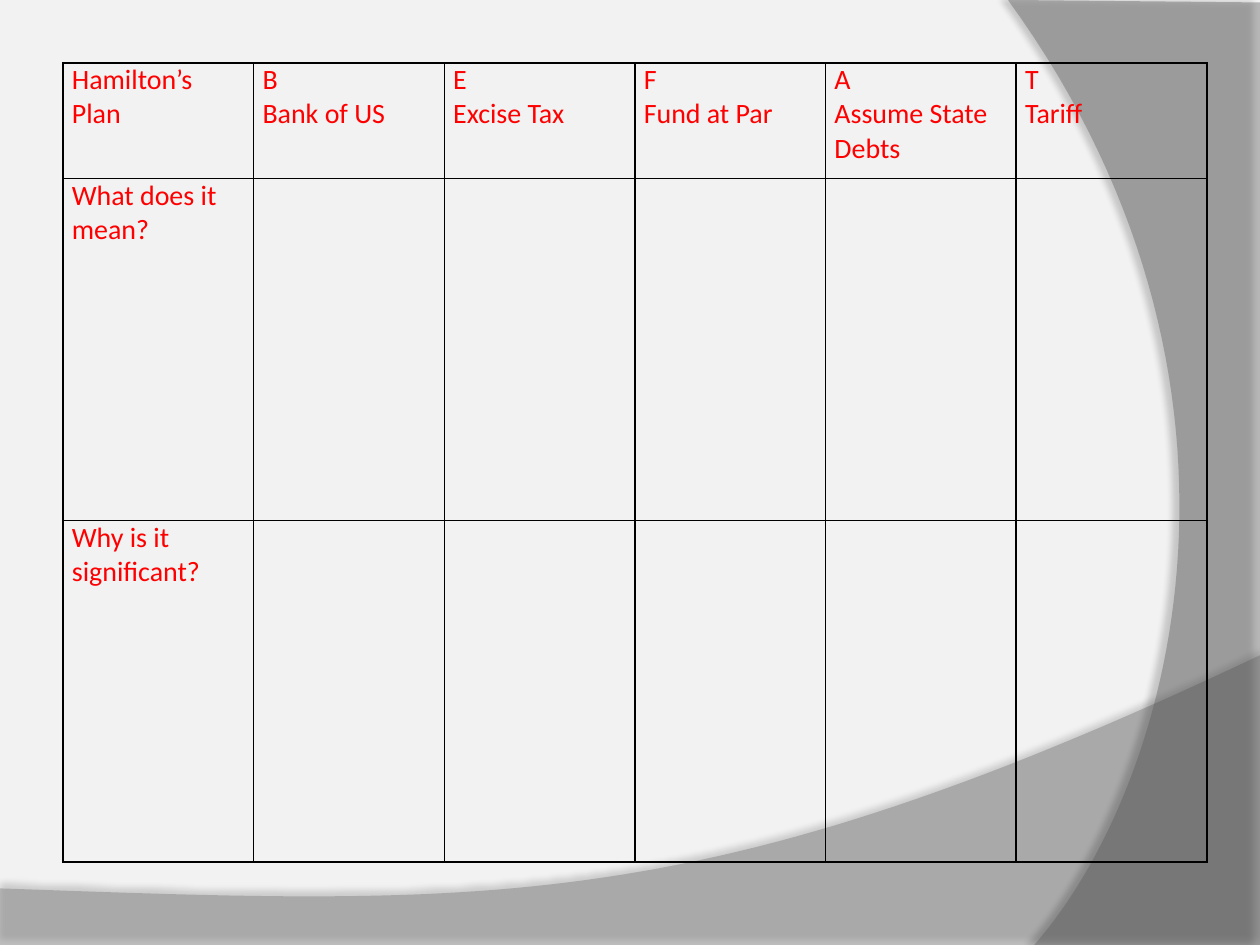
from lxml import etree
from pptx import Presentation
from pptx.dml.color import RGBColor
from pptx.enum.text import MSO_ANCHOR
from pptx.oxml.ns import qn
from pptx.util import Cm, Pt

TOP = MSO_ANCHOR.TOP
BACKGROUND = RGBColor(0xF2, 0xF2, 0xF2)
WAVE_GRAY = RGBColor(0x7F, 0x7F, 0x7F)
ARC_GRAY = RGBColor(0x5E, 0x5E, 0x5E)
BLACK = RGBColor(0, 0, 0)
RED = RGBColor(0xFF, 0, 0)

PLAN_ROWS = [
    ["Hamilton’s Plan", "B\nBank of US", "E\nExcise Tax", "F\nFund at Par",
     "A\nAssume State Debts", "T\nTariff"],
    ["What does it mean?"],
    ["Why is it significant?"],
]
ROW_HEIGHTS = [2.33, 6.89, 6.89]
COLUMN_COUNT = 6


def add_child(parent, tag, **attributes):
    child = etree.SubElement(parent, qn(tag))
    for name, value in attributes.items():
        child.set(name, str(value))
    return child


def add_color(parent, color, opacity):
    node = add_child(parent, "a:srgbClr", val=color)
    add_child(node, "a:alpha", val=opacity * 1000)


def curve_points(start, first, second, end, steps=60):
    points = []
    for step in range(steps + 1):
        t = step / steps
        weights = ((1 - t) ** 3, 3 * t * (1 - t) ** 2, 3 * t * t * (1 - t), t ** 3)
        points.append(tuple(
            sum(weight * value for weight, value in zip(weights, values))
            for values in zip(start, first, second, end)))
    return points


def add_swoosh(slide, left, top, points, color, opacity, shadow):
    outline = [(Cm(left + x), Cm(top + y)) for x, y in points]
    builder = slide.shapes.build_freeform(*outline[0])
    builder.add_line_segments(outline[1:], close=True)
    shape = builder.convert_to_shape()
    shape.fill.solid()
    shape.fill.fore_color.rgb = color
    fill_color = shape.fill._xPr.find(qn("a:solidFill"))[0]
    add_child(fill_color, "a:alpha", val=opacity * 1000)
    shape.line.fill.background()
    shape.shadow.inherit = False
    effects = shape._element.spPr.find(qn("a:effectLst"))
    outer = add_child(effects, "a:outerShdw", blurRad=Pt(shadow["blur"]),
                      dist=Pt(shadow["distance"]), dir=shadow["angle"] * 60000,
                      algn="ctr", rotWithShape=0)
    add_color(outer, BLACK, shadow["opacity"])


def add_backdrop(slide):
    slide.background.fill.solid()
    slide.background.fill.fore_color.rgb = BACKGROUND
    wave = [(0, 5.86), (25.4, 5.86)] + curve_points(
        (25.4, 0), (14.2, 5.31), (9.93, 5.05), (0, 4.7))
    add_swoosh(slide, 0, 13.21, wave, WAVE_GRAY, 45,
               {"opacity": 35, "blur": 4, "distance": 3.5, "angle": 270})
    arc = [(5.08, 0.05), (5.08, 19.05)] + curve_points(
        (0.53, 19.05), (3.43, 15.72), (5.54, 7.62), (0, 0))
    add_swoosh(slide, 20.32, 0, arc, ARC_GRAY, 40,
               {"opacity": 45, "blur": 4, "distance": 4, "angle": 180})


def write_text(frame, text, size, font, color):
    frame.text = text
    for paragraph in frame.paragraphs:
        for run in paragraph.runs:
            run.font.size = Pt(size)
            run.font.name = font
            run.font.color.rgb = color


def format_cell(cell):
    cell.margin_left = cell.margin_right = Cm(0.18)
    cell.margin_top = cell.margin_bottom = Cm(0)
    cell.vertical_anchor = TOP
    properties = cell._tc.get_or_add_tcPr()
    for side in ("a:lnL", "a:lnR", "a:lnT", "a:lnB"):
        border = add_child(properties, side, w=Pt(1))
        add_color(add_child(border, "a:solidFill"), BLACK, 100)
    cell.fill.background()


def add_plan_table(slide, left, top, width):
    table = slide.shapes.add_table(
        len(PLAN_ROWS), COLUMN_COUNT, Cm(left), Cm(top), Cm(width),
        Cm(sum(ROW_HEIGHTS))).table
    table.first_row = False
    table.horz_banding = False
    for column in table.columns:
        column.width = Cm(width / COLUMN_COUNT)
    for row, height in zip(table.rows, ROW_HEIGHTS):
        row.height = Cm(height)
    for cell in table.iter_cells():
        format_cell(cell)
    for row, texts in zip(table.rows, PLAN_ROWS):
        for cell, text in zip(row.cells, texts):
            write_text(cell.text_frame, text, size=16, font="Calibri", color=RED)


def main():
    presentation = Presentation()
    presentation.slide_width = Cm(25.4)
    presentation.slide_height = Cm(19.05)
    slide = presentation.slides.add_slide(presentation.slide_layouts[6])
    add_backdrop(slide)
    add_plan_table(slide, 1.27, 1.27, 23.06)
    presentation.save("out.pptx")


if __name__ == "__main__":
    main()
